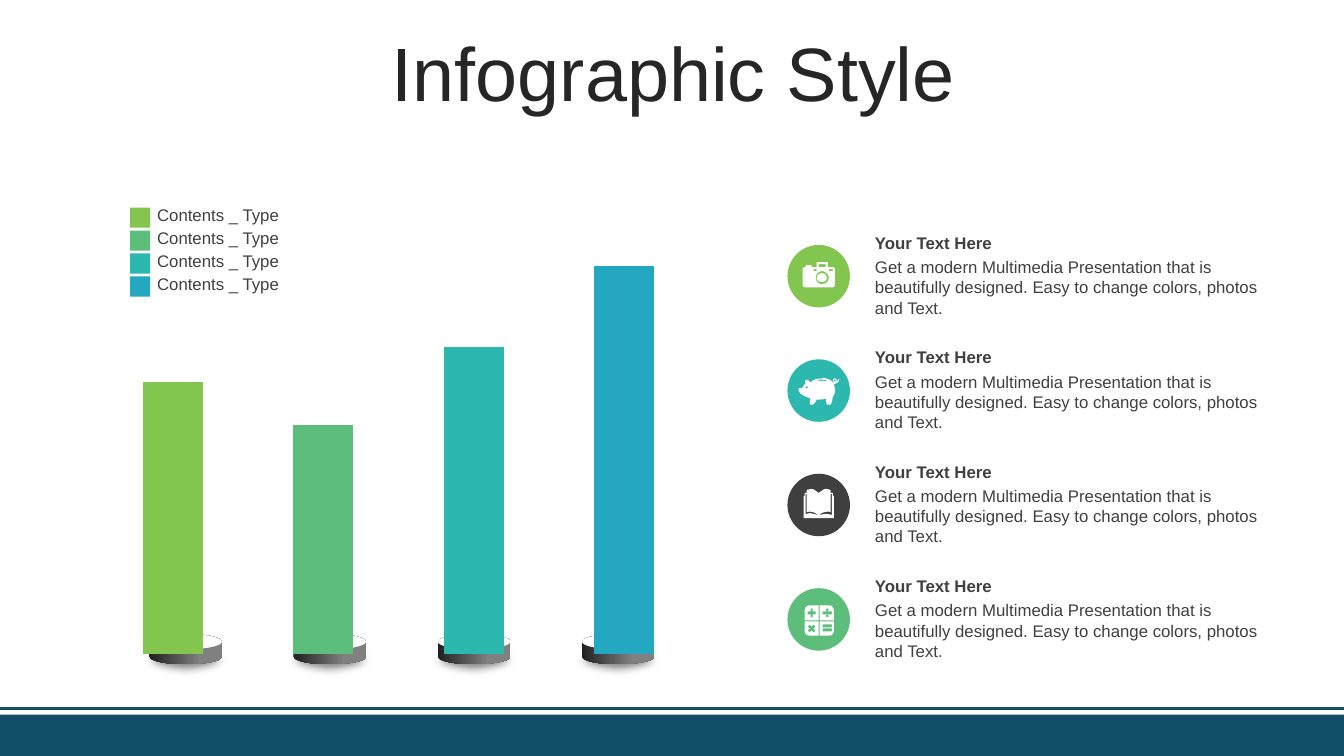
import dataclasses

import lxml.etree
import pptx
import pptx.chart.data
import pptx.dml.color
import pptx.enum.chart
import pptx.enum.shapes
import pptx.enum.text
import pptx.oxml
import pptx.oxml.ns
import pptx.util

Inches = pptx.util.Inches
SHAPE = pptx.enum.shapes.MSO_SHAPE
ANCHOR = pptx.enum.text.MSO_ANCHOR
qn = pptx.oxml.ns.qn


@dataclasses.dataclass(frozen=True)
class Theme:
    font: str = "Arial"
    title_size: int = 54
    text_size: int = 12
    chart_size: int = 10
    title: str = "262626"
    text: str = "404040"
    chart_text: str = "000000"
    lime: str = "82C650"
    green: str = "5CBE7A"
    teal: str = "2CB8AE"
    blue: str = "24A8C2"
    dark: str = "3F3F3F"
    navy: str = "124F69"
    white: str = "FFFFFF"
    grey: str = "808080"
    black: str = "202020"


THEME = Theme()
BAR_COLORS = [THEME.lime, THEME.green, THEME.teal, THEME.blue]
BAR_VALUES = [70, 59, 79, 100, None]

CAMERA = (
    "M 34 28 C 37 28 39 30 39 33 C 39 35 37 37 34 37 C 32 37 29 35 29 33 C 29 30 32 28 34 28 Z "
    "M 34 26 C 31 26 28 29 28 33 C 28 36 31 39 34 39 C 38 39 41 36 41 33 C 41 29 38 26 34 26 Z "
    "M 26 24 L 26 26 29 26 29 24 Z M 41 24 L 41 26 45 26 45 24 Z M 31 19 L 31 22 38 22 38 19 Z "
    "M 30 17 L 39 17 C 40 17 40 18 40 18 L 40 22 45 22 C 46 22 47 23 47 24 L 47 39 "
    "C 47 41 46 42 45 42 L 18 42 C 16 42 15 41 15 39 L 15 24 C 15 23 16 22 18 22 L 18 21 "
    "C 18 20 19 20 19 20 L 23 20 C 24 20 24 20 24 21 L 24 22 29 22 29 18 C 29 18 29 17 30 17 Z")
PIG = (
    "M 19 27 C 18 27 18 27 18 28 C 18 28 18 29 19 29 C 20 29 20 28 20 28 C 20 27 20 27 19 27 Z "
    "M 47 20 C 47 20 46 21 46 21 C 46 22 47 22 47 22 C 48 22 48 22 48 21 C 48 21 48 20 47 20 Z "
    "M 34 20 C 32 20 30 21 29 22 C 32 21 36 21 39 22 L 39 21 C 38 21 36 20 34 20 Z "
    "M 34 19 C 38 18 43 20 45 23 L 46 24 C 46 24 46 24 46 23 C 46 23 45 22 45 21 "
    "C 45 20 46 19 47 19 C 48 19 49 20 49 21 C 49 22 49 22 49 22 C 49 22 50 22 51 19 "
    "C 52 22 50 23 48 24 C 47 24 47 25 46 25 L 47 28 C 48 31 47 35 45 37 C 45 40 44 42 43 45 "
    "L 39 45 C 39 43 38 41 38 39 C 35 40 31 40 29 40 C 28 42 27 44 25 45 L 23 45 "
    "C 22 45 22 41 23 39 C 19 37 10 35 11 29 C 11 28 14 29 15 28 C 16 27 16 26 18 24 "
    "C 18 23 17 21 18 21 C 21 19 21 22 23 23 C 25 20 30 19 34 19 Z")
BOOK = (
    "M 31 41 C 36 40 39 39 44 41 L 44 20 43 20 43 38 C 39 37 35 38 31 41 L 31 19 "
    "C 34 17 36 15 38 15 C 40 15 41 16 43 16 L 43 19 45 19 45 22 46 22 46 44 16 44 16 22 "
    "17 22 17 19 19 19 19 16 C 21 16 22 15 24 15 C 26 15 28 17 31 19 L 31 41 "
    "C 27 38 23 37 19 38 L 19 20 18 20 18 40 C 23 38 26 40 31 41 Z")
CALCULATOR = (
    "M 35 40 L 35 43 44 43 44 40 Z M 35 36 L 35 39 44 39 44 36 Z "
    "M 22 36 L 20 38 22 40 20 42 22 44 24 42 26 44 28 42 26 40 28 38 26 36 24 38 Z "
    "M 32 33 L 46 33 46 42 C 46 45 44 47 42 47 L 32 47 Z "
    "M 17 33 L 31 33 31 47 22 47 C 19 47 17 45 17 42 Z "
    "M 39 26 C 39 26 38 27 38 28 C 38 28 39 29 39 29 C 40 29 41 28 41 28 C 41 27 40 26 39 26 Z "
    "M 35 23 L 35 26 44 26 44 23 Z "
    "M 23 20 L 23 23 20 23 20 26 23 26 23 29 25 29 25 26 28 26 28 23 25 23 25 20 Z "
    "M 39 20 C 39 20 38 21 38 22 C 38 22 39 23 39 23 C 40 23 41 22 41 22 C 41 21 40 20 39 20 Z "
    "M 22 17 L 42 17 C 44 17 46 20 46 22 L 46 32 32 32 32 17 31 17 31 32 17 32 17 22 "
    "C 17 20 19 17 22 17 Z")
ITEMS = [(THEME.lime, CAMERA), (THEME.teal, PIG), (THEME.dark, BOOK), (THEME.green, CALCULATOR)]
HEADING = "Your Text Here"
DETAIL = ("Get a modern Multimedia Presentation that is beautifully designed. "
          "Easy to change colors, photos and Text.")


def rgb(color):
    return pptx.dml.color.RGBColor.from_string(color)


def paint(sp, color):
    sp.shadow.inherit = False
    sp.fill.solid()
    sp.fill.fore_color.rgb = rgb(color)
    sp.line.fill.background()
    return sp


def add_block(s, kind, box, color):
    return paint(s.shapes.add_shape(kind, *map(Inches, box)), color)


def add_text(s, box, text, size, color, bold=False, anchor=ANCHOR.TOP):
    tf = s.shapes.add_textbox(*map(Inches, box)).text_frame
    tf.word_wrap = True
    tf.vertical_anchor = anchor
    p = tf.paragraphs[0]
    r = p.add_run()
    r.text = text
    r.font.name, r.font.size, r.font.bold = THEME.font, pptx.util.Pt(size), bold
    r.font.color.rgb = rgb(color)
    return p


def add_title(s, box):
    p = add_text(s, box, "Infographic Style", THEME.title_size, THEME.title, anchor=ANCHOR.MIDDLE)
    p.alignment = pptx.enum.text.PP_ALIGN.CENTER
    p.line_spacing = 0.9
    p.space_before = pptx.util.Pt(10)


def add_footer(s, box):
    x, y, w, h = box
    rule = s.shapes.add_connector(pptx.enum.shapes.MSO_CONNECTOR.STRAIGHT,
                                  *map(Inches, (x, y, x + w, y)))
    rule.line.color.rgb = rgb(THEME.navy)
    rule.line.width = pptx.util.Pt(2)
    lxml.etree.SubElement(rule._element.spPr, qn("a:effectLst"))
    add_block(s, SHAPE.RECTANGLE, (x, y + 0.06, w, h - 0.06), THEME.navy)


def add_pedestal(s, box):
    x, y, w, h = box
    shade = add_block(s, SHAPE.OVAL, (x, y + 0.08, w, h - 0.08), THEME.grey)
    effects = shade._element.spPr.find(qn("a:effectLst"))
    lxml.etree.SubElement(effects, qn("a:softEdge"), rad=str(Inches(0.09)))
    can = add_block(s, SHAPE.CAN, (x + 0.15, y, 0.72, 0.3), THEME.grey)
    can.adjustments[0] = 0.5
    can.fill.gradient()
    can.fill.gradient_angle = 0
    for stop, color, position in zip(can.fill.gradient_stops, (THEME.black, THEME.grey), (0, 0.7)):
        stop.color.rgb = rgb(color)
        stop.position = position
    add_block(s, SHAPE.OVAL, (x + 0.15, y, 0.72, 0.15), THEME.white)


def add_bar_chart(s, box):
    data = pptx.chart.data.CategoryChartData()
    data.categories = ["1", "2", "3", "4", ""]
    data.add_series("Series 1", BAR_VALUES)
    chart = s.shapes.add_chart(pptx.enum.chart.XL_CHART_TYPE.COLUMN_CLUSTERED,
                               *map(Inches, box), data).chart
    chart.has_legend = chart.has_title = False
    chart.font.name, chart.font.size = THEME.font, pptx.util.Pt(THEME.chart_size)
    chart.font.color.rgb = rgb(THEME.chart_text)
    chart.value_axis.minimum_scale, chart.value_axis.maximum_scale = 0, 141
    chart.value_axis.has_major_gridlines = False
    chart.value_axis.visible = chart.category_axis.visible = False
    plot = chart.plots[0]
    plot.gap_width = 150
    plot.vary_by_categories = False
    series = plot.series[0]
    for target, color in zip([series] + [series.points[i] for i in (1, 2, 3)], BAR_COLORS):
        target.format.fill.solid()
        target.format.fill.fore_color.rgb = rgb(color)
    area = chart._chartSpace.chart.plotArea
    for old in area.findall(qn("c:layout")):
        area.remove(old)
    layout = lxml.etree.Element(qn("c:layout"))
    manual = lxml.etree.SubElement(layout, qn("c:manualLayout"))
    for tag, val in [("layoutTarget", "inner"), ("xMode", "edge"), ("yMode", "edge"),
                     ("x", "0.02"), ("y", "0.018"), ("w", "0.96"), ("h", "0.96")]:
        lxml.etree.SubElement(manual, qn("c:" + tag), val=val)
    area.insert(0, layout)


def add_legend(s, box):
    x, y, w, h = box
    for i, color in enumerate(BAR_COLORS):
        top = y + i * h / len(BAR_COLORS)
        add_block(s, SHAPE.RECTANGLE, (x, top + 0.08, 0.2, 0.2), color)
        add_text(s, (x + 0.17, top, w - 0.17, 0.3), "Contents _ Type",
                 THEME.text_size, THEME.text, anchor=ANCHOR.MIDDLE)


def bezier(points, steps=6):
    (ax, ay), (bx, by), (cx, cy), (dx, dy) = points
    for t in (i / steps for i in range(1, steps + 1)):
        k = [(1 - t) ** 3, 3 * t * (1 - t) ** 2, 3 * t * t * (1 - t), t ** 3]
        yield (k[0] * ax + k[1] * bx + k[2] * cx + k[3] * dx,
               k[0] * ay + k[1] * by + k[2] * cy + k[3] * dy)


def add_icon(s, x, y, outline):
    builder = None
    for contour in outline.split("M")[1:]:
        points, command, pending = [], "L", []
        for token in contour.replace("Z", "").split():
            if token in "LC":
                command = token
                continue
            pending.append(float(token) * 10)
            if len(pending) == (6 if command == "C" else 2):
                pairs = list(zip(pending[::2], pending[1::2]))
                points += bezier([points[-1]] + pairs) if command == "C" else pairs
                pending = []
        if builder is None:
            builder = s.shapes.build_freeform(*points[0], scale=Inches(1) / 1000)
        else:
            builder.move_to(*points[0])
        builder.add_line_segments(points[1:], close=True)
    paint(builder.convert_to_shape(Inches(x), Inches(y)), THEME.white)


def add_item(s, box, color, outline):
    x, y, w, h = box
    add_text(s, (x + 0.77, y, w - 0.77, 0.3), HEADING, THEME.text_size, THEME.text, bold=True)
    add_text(s, (x + 0.77, y + 0.24, w - 0.77, h - 0.24), DETAIL, THEME.text_size, THEME.text)
    add_block(s, SHAPE.OVAL, (x, y + 0.17, 0.62, 0.62), color)
    add_icon(s, x, y + 0.17, outline)


def main():
    prs = pptx.Presentation()
    prs.slide_width, prs.slide_height = Inches(13.33), Inches(7.5)
    s = prs.slides.add_slide(prs.slide_layouts[6])
    add_footer(s, (0, 7.03, 13.33, 0.47))
    for i in range(len(BAR_COLORS)):
        add_pedestal(s, (1.33 + i * 1.43, 6.29, 1.02, 0.43))
    add_bar_chart(s, (0.81, 0.96, 7.78, 5.65))
    add_title(s, (0.35, 0.37, 12.66, 0.79))
    add_legend(s, (1.29, 1.98, 1.6, 0.91))
    for i, (color, outline) in enumerate(ITEMS):
        add_item(s, (7.81, 2.26 + i * 1.135, 4.83, 0.95), color, outline)
    prs.save("out.pptx")


if __name__ == "__main__":
    main()
